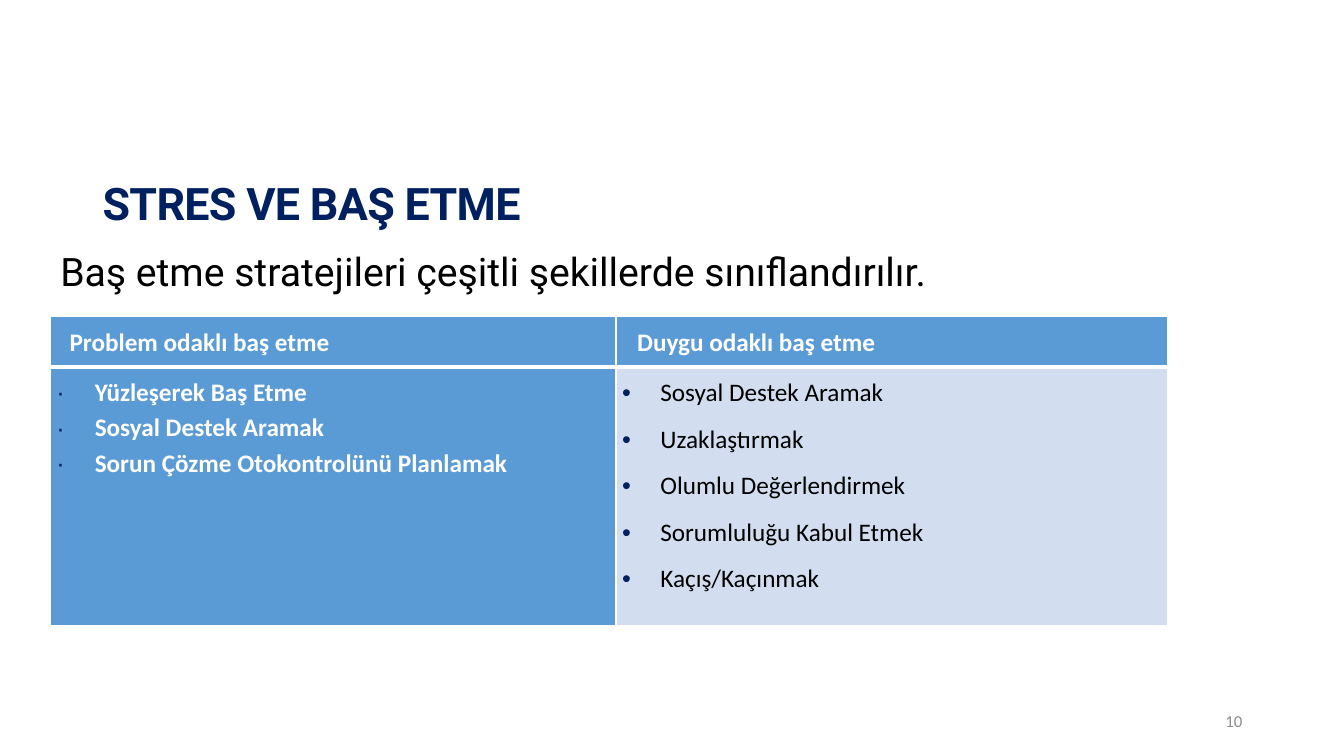
import pptx
import pptx.util
import pptx.dml.color
import pptx.enum.text
import pptx.oxml
import pptx.oxml.ns
import lxml.etree

PX_PER_INCH = 100
COLORS = {
    "navy": "002060",
    "black": "000000",
    "white": "FFFFFF",
    "grey": "8C8C8C",
    "header": "5B9BD5",
    "pale": "D2DEEF",
}
ALIGN = pptx.enum.text.PP_ALIGN
ANCHOR = pptx.enum.text.MSO_ANCHOR

COPING_STYLES = [
    {
        "heading": "Problem odaklı baş etme",
        "strategies": [
            "Yüzleşerek Baş Etme",
            "Sosyal Destek Aramak",
            "Sorun Çözme Otokontrolünü Planlamak",
        ],
        "width": 561, "heading_indent": 13, "fill": "header",
        "format": {"bullet": "·", "color": "white", "bold": True},
    },
    {
        "heading": "Duygu odaklı baş etme",
        "strategies": [
            "Sosyal Destek Aramak",
            "Uzaklaştırmak",
            "Olumlu Değerlendirmek",
            "Sorumluluğu Kabul Etmek",
            "Kaçış/Kaçınmak",
        ],
        "width": 547, "heading_indent": 15, "fill": "pale",
        "format": {"bullet": "•", "color": "black", "after": 8},
    },
]


def px(length):
    return pptx.util.Emu(length * 914400 // PX_PER_INCH)


def rgb(color):
    return pptx.dml.color.RGBColor.from_string(COLORS[color])


def add_child(parent, tag, **attributes):
    child = lxml.etree.SubElement(parent, pptx.oxml.ns.qn(tag))
    for key, value in attributes.items():
        child.set(key, str(value))
    return child


def write(paragraph, text, *, size=18, font="Calibri", color="black", bold=False,
          align=ALIGN.LEFT, line=1.0, after=0, indent=0, bullet=None, tracking=0):
    """Fill one paragraph; a bullet hangs in the indent."""
    properties = paragraph._p.get_or_add_pPr()
    properties.set("marL", str(px(indent)))
    properties.set("indent", str(-px(indent) if bullet else 0))
    if bullet:
        add_child(add_child(properties, "a:buClr"), "a:srgbClr", val=COLORS["navy"])
        add_child(properties, "a:buFont", typeface="Arial")
        add_child(properties, "a:buChar", char=bullet)
    paragraph.alignment = align
    paragraph.line_spacing = line
    paragraph.space_after = pptx.util.Pt(after)
    run = paragraph.add_run()
    run.text = text
    run.font.size = pptx.util.Pt(size)
    run.font.name = font
    run.font.bold = bold
    run.font.color.rgb = rgb(color)
    if tracking:
        run._r.get_or_add_rPr().set("spc", str(tracking))


def add_text(slide, box, text, anchor=ANCHOR.TOP, **text_format):
    frame = slide.shapes.add_textbox(*map(px, box)).text_frame
    frame.word_wrap = True
    frame.vertical_anchor = anchor
    write(frame.paragraphs[0], text, **text_format)


def style_cell(cell, fill, **border_points):
    properties = cell._tc.get_or_add_tcPr()
    for side in "LRTB":
        width = pptx.util.Pt(border_points.get(side, 1))
        border = add_child(properties, f"a:ln{side}", w=width)
        add_child(add_child(border, "a:solidFill"), "a:srgbClr", val=COLORS["white"])
    cell.fill.solid()
    cell.fill.fore_color.rgb = rgb(fill)
    cell.margin_left = cell.margin_right = px(6)
    cell.margin_top = cell.margin_bottom = px(6)


def add_coping_table(slide, box, header_height):
    left, top, width, height = box
    table = slide.shapes.add_table(
        2, len(COPING_STYLES), px(left), px(top), px(width), px(height)).table
    table.rows[0].height = px(header_height)
    table.rows[1].height = px(height - header_height)
    shared = {"align": ALIGN.JUSTIFY, "line": 1.15}
    for column, style in enumerate(COPING_STYLES):
        table.columns[column].width = px(style["width"])
        heading, strategies = table.cell(0, column), table.cell(1, column)
        style_cell(heading, "header", B=3)
        style_cell(strategies, style["fill"], T=3)
        write(heading.text_frame.paragraphs[0], style["heading"], color="white",
              bold=True, after=8, indent=style["heading_indent"], **shared)
        frame = strategies.text_frame
        for index, strategy in enumerate(style["strategies"]):
            paragraph = frame.add_paragraph() if index else frame.paragraphs[0]
            write(paragraph, strategy, indent=38, **shared, **style["format"])


def build_coping_slide(slide, width, height):
    add_text(slide, (92, 132, width - 183, 145), "STRES VE BAŞ ETME", ANCHOR.MIDDLE,
             size=32, font="Roboto", color="navy", bold=True, line=0.9, tracking=-50)
    add_text(slide, (50, 246, width - 97, 60),
             "Baş etme stratejileri çeşitli şekillerde sınıflandırılır.",
             size=28, font="Roboto", line=0.9)
    add_coping_table(slide, (50, 314, 1108, 307), header_height=50)
    add_text(slide, (width - 391, height - 55, 300, 40), "10", ANCHOR.MIDDLE,
             size=12, color="grey", align=ALIGN.RIGHT)


def main():
    width, height = 1333, 750
    presentation = pptx.Presentation()
    presentation.slide_width = px(width)
    presentation.slide_height = px(height)
    slide = presentation.slides.add_slide(presentation.slide_layouts[6])
    build_coping_slide(slide, width, height)
    presentation.save("out.pptx")


if __name__ == "__main__":
    main()
